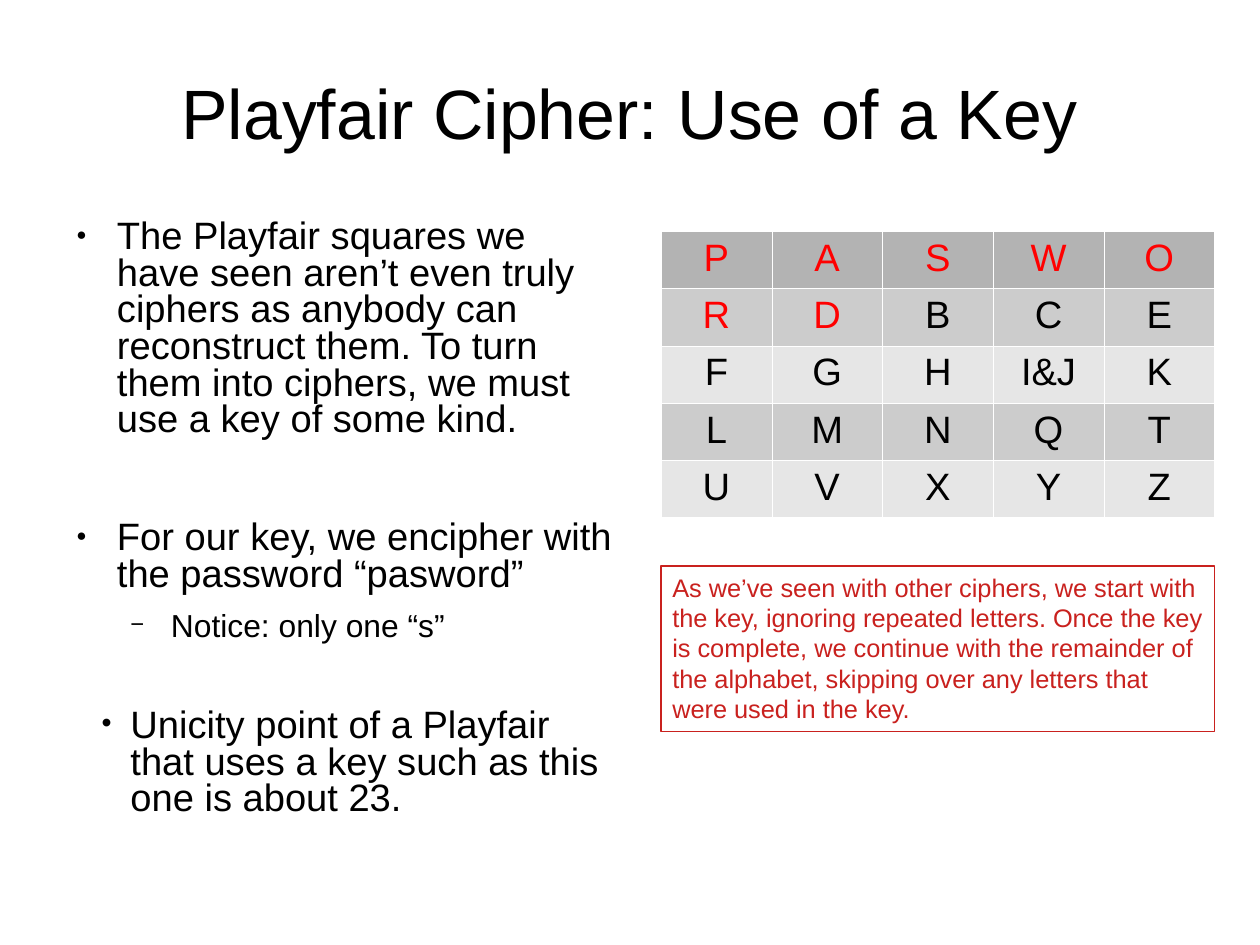
from lxml import etree
from pptx import Presentation
from pptx.dml.color import RGBColor
from pptx.enum.shapes import MSO_SHAPE
from pptx.enum.text import MSO_ANCHOR, MSO_AUTO_SIZE, PP_ALIGN
from pptx.oxml.ns import qn
from pptx.util import Cm, Pt

RECTANGLE = MSO_SHAPE.RECTANGLE
TOP, MIDDLE = MSO_ANCHOR.TOP, MSO_ANCHOR.MIDDLE
GROW = MSO_AUTO_SIZE.SHAPE_TO_FIT_TEXT
LEFT, CENTER = PP_ALIGN.LEFT, PP_ALIGN.CENTER
TITLE_ONLY = 5

COLORS = {
    "text": "000000",
    "key": "FF0000",
    "note": "C9211E",
    "border": "FFFFFF",
    "header": "B3B3B3",
    "dark band": "CCCCCC",
    "light band": "E6E6E6",
}

KEY = "PASWORD"
SQUARE = [
    ["P", "A", "S", "W", "O"],
    ["R", "D", "B", "C", "E"],
    ["F", "G", "H", "I&J", "K"],
    ["L", "M", "N", "Q", "T"],
    ["U", "V", "X", "Y", "Z"],
]

# text, level, size, space before, left indent, hanging, bullet, bullet percent
POINTS = [
    ("The Playfair squares we have seen aren’t even truly ciphers as anybody can "
     "reconstruct them. To turn them into ciphers, we must use a key of some kind.",
     0, 24, 14.2, 1.2, 0.9, "●", 45),
    ("For our key, we encipher with the password “pasword”",
     0, 24, 51.5, 1.2, 0.9, "●", 45),
    ("Notice: only one “s”", 1, 20, 11.3, 2.4, 0.9, "−", 75),
    ("Unicity point of a Playfair that uses a key such as this one is about 23.",
     0, 24, 41.5, 1.5, 0.64, "•", 75),
]

NOTE = (
    "As we’ve seen with other ciphers, we start with the key, ignoring repeated "
    "letters. Once the key is complete, we continue with the remainder of the "
    "alphabet, skipping over any letters that were used in the key."
)


class SlideBuilder:
    font_name = "Arial"

    def __init__(self, slide):
        self.slide = slide

    def color(self, name):
        return RGBColor.from_string(COLORS[name])

    def set_text(self, para, text, size, color="text", align=LEFT):
        para.text = text
        para.alignment = align
        para.font.name = self.font_name
        para.font.size = Pt(size)
        para.font.color.rgb = self.color(color)

    def clear_margins(self, frame):
        frame.margin_left = frame.margin_right = 0
        frame.margin_top = frame.margin_bottom = 0

    def title(self, text, left, top, width, height):
        box = self.slide.shapes.title
        box.left, box.top, box.width, box.height = left, top, width, height
        frame = box.text_frame
        self.clear_margins(frame)
        frame.vertical_anchor = MIDDLE
        frame.auto_size = GROW
        para = frame.paragraphs[0]
        self.set_text(para, text, 44, align=CENTER)
        para.line_spacing = 0.9

    def bullet(self, para, char, percent, indent, hanging):
        properties = para._p.get_or_add_pPr()
        properties.set("marL", str(Cm(indent)))
        properties.set("indent", str(-Cm(hanging)))
        bullet_color = etree.Element(qn("a:buClr"))
        etree.SubElement(bullet_color, qn("a:srgbClr"), val=COLORS["text"])
        marks = [
            bullet_color,
            etree.Element(qn("a:buSzPct"), val=str(percent * 1000)),
            etree.Element(qn("a:buFont"), typeface=self.font_name),
            etree.Element(qn("a:buChar"), char=char),
        ]
        defaults = properties.find(qn("a:defRPr"))
        for mark in marks:
            defaults.addprevious(mark)

    def bullets(self, points, left, top, width, height):
        frame = self.slide.shapes.add_textbox(left, top, width, height).text_frame
        frame.word_wrap = True
        self.clear_margins(frame)
        for index, point in enumerate(points):
            text, level, size, before, indent, hanging, char, percent = point
            para = frame.add_paragraph() if index else frame.paragraphs[0]
            self.set_text(para, text, size)
            para.level = level
            para.line_spacing = 0.8
            para.space_before = Pt(before)
            self.bullet(para, char, percent, indent, hanging)

    def borders(self, cell):
        properties = cell._tc.get_or_add_tcPr()
        for position, side in enumerate(("a:lnL", "a:lnR", "a:lnT", "a:lnB")):
            line = etree.Element(qn(side), w=str(Pt(0.06)))
            fill = etree.SubElement(line, qn("a:solidFill"))
            etree.SubElement(fill, qn("a:srgbClr"), val=COLORS["border"])
            properties.insert(position, line)

    def square(self, rows, key, left, top, width, row_height):
        table = self.slide.shapes.add_table(
            len(rows), len(rows[0]), left, top, width, row_height * len(rows)
        ).table
        for row_index, letters in enumerate(rows):
            table.rows[row_index].height = row_height
            band = "dark band" if row_index % 2 else "light band"
            fill = band if row_index else "header"
            for column_index, letter in enumerate(letters):
                cell = table.cell(row_index, column_index)
                cell.fill.solid()
                cell.fill.fore_color.rgb = self.color(fill)
                color = "key" if letter in key else "text"
                para = cell.text_frame.paragraphs[0]
                self.set_text(para, letter, 24, color, CENTER)
                para.font.bold = False
                self.borders(cell)

    def note(self, text, left, top, width, height):
        box = self.slide.shapes.add_shape(RECTANGLE, left, top, width, height)
        box.shadow.inherit = False
        box.fill.background()
        box.line.color.rgb = self.color("note")
        box.line.width = Pt(0.75)
        frame = box.text_frame
        frame.word_wrap = True
        frame.vertical_anchor = TOP
        frame.auto_size = GROW
        self.set_text(frame.paragraphs[0], text, 16, "note")


def main():
    deck = Presentation()
    deck.slide_width, deck.slide_height = Cm(28), Cm(21)
    page = SlideBuilder(deck.slides.add_slide(deck.slide_layouts[TITLE_ONLY]))
    left, right, column_width = Cm(1.4), Cm(14.69), Cm(12.3)
    page.title("Playfair Cipher: Use of a Key", left, Cm(1.75), Cm(25.2), Cm(1.7))
    page.bullets(POINTS, left, Cm(4.9), column_width, Cm(12.17))
    page.square(SQUARE, KEY, right, Cm(5.14), column_width, Cm(1.2))
    page.note(NOTE, right, Cm(12.58), column_width, Cm(3.68))
    deck.save("out.pptx")


if __name__ == "__main__":
    main()
